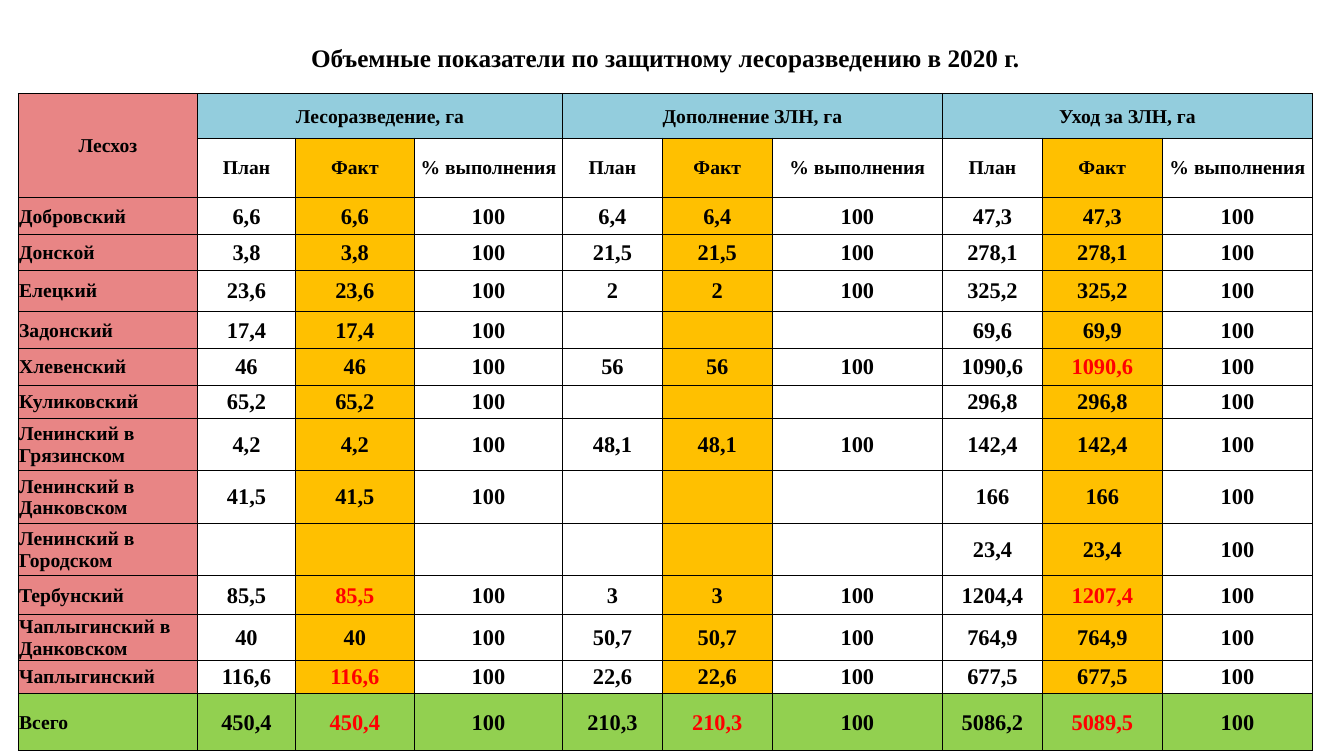
"""Builds the slide with the 2020 table of protective afforestation figures."""
from lxml import etree
from pptx import Presentation
from pptx.dml.color import RGBColor
from pptx.enum.text import MSO_ANCHOR, PP_ALIGN
from pptx.oxml.ns import qn
from pptx.util import Pt

MIDDLE = MSO_ANCHOR.MIDDLE
LEFT, CENTER = PP_ALIGN.LEFT, PP_ALIGN.CENTER

TITLE = "Объемные показатели по защитному лесоразведению в 2020 г."
CORNER = "Лесхоз"
GROUPS = ["Лесоразведение, га", "Дополнение ЗЛН, га", "Уход за ЗЛН, га"]
MEASURES = ["План", "Факт", "% выполнения"]
DONE = "100"
NO_DATA = ("", "")
FORESTRIES = [
    ("Добровский", ("6,6", "6,6"), ("6,4", "6,4"), ("47,3", "47,3")),
    ("Донской", ("3,8", "3,8"), ("21,5", "21,5"), ("278,1", "278,1")),
    ("Елецкий", ("23,6", "23,6"), ("2", "2"), ("325,2", "325,2")),
    ("Задонский", ("17,4", "17,4"), NO_DATA, ("69,6", "69,9")),
    ("Хлевенский", ("46", "46"), ("56", "56"), ("1090,6", "1090,6")),
    ("Куликовский", ("65,2", "65,2"), NO_DATA, ("296,8", "296,8")),
    ("Ленинский в Грязинском", ("4,2", "4,2"), ("48,1", "48,1"), ("142,4", "142,4")),
    ("Ленинский в Данковском", ("41,5", "41,5"), NO_DATA, ("166", "166")),
    ("Ленинский в Городском", NO_DATA, NO_DATA, ("23,4", "23,4")),
    ("Тербунский", ("85,5", "85,5"), ("3", "3"), ("1204,4", "1207,4")),
    ("Чаплыгинский в Данковском", ("40", "40"), ("50,7", "50,7"), ("764,9", "764,9")),
    ("Чаплыгинский", ("116,6", "116,6"), ("22,6", "22,6"), ("677,5", "677,5")),
    ("Всего", ("450,4", "450,4"), ("210,3", "210,3"), ("5086,2", "5089,5")),
]
RED_FACTS = {"1090,6", "85,5", "1207,4", "116,6", "450,4", "210,3", "5089,5"}

PX = 9144
SLIDE_WIDTH, SLIDE_HEIGHT = 1333, 750
TABLE_LEFT, TABLE_TOP = 18, 22
COLUMN_WIDTHS = [178, 97, 118, 147, 99, 109, 169, 99, 119, 149]
ROW_HEIGHTS = [71, 44, 59, 37, 35, 41, 37, 36, 33, 52, 52, 52, 39, 45, 33, 57]
FIRST_DATA_ROW = 3
TOTAL_ROW = len(ROW_HEIGHTS) - 1

FONT = "Times New Roman"
BLACK, RED, WHITE = "000000", "FF0000", "FFFFFF"
PINK, BLUE, AMBER, GREEN = "E88585", "93CDDD", "FFC000", "92D050"
MEASURE_FILLS = [WHITE, AMBER, WHITE]
ALL_SIDES = "LRTB"


def rgb(color):
    return RGBColor.from_string(color)


def write(cell, text, size=14, color=BLACK, align=CENTER):
    cell.vertical_anchor = MIDDLE
    cell.margin_left = cell.margin_right = cell.margin_top = PX
    cell.margin_bottom = 0
    para = cell.text_frame.paragraphs[0]
    para.alignment = align
    if text:
        span = para.add_run()
        span.text = text
        span.font.name, span.font.size, span.font.bold = FONT, Pt(size), True
        span.font.color.rgb = rgb(color)


def paint(cell, color):
    if color:
        cell.fill.solid()
        cell.fill.fore_color.rgb = rgb(color)
    else:
        cell.fill.background()


def outline(cell, sides):
    properties = cell._tc.get_or_add_tcPr()
    for position, side in enumerate(ALL_SIDES):
        line = etree.Element(qn(f"a:ln{side}"), w=str(Pt(0.5)))
        if side in sides:
            fill = etree.SubElement(line, qn("a:solidFill"))
            etree.SubElement(fill, qn("a:srgbClr"), val=BLACK)
        else:
            etree.SubElement(line, qn("a:noFill"))
        properties.insert(position, line)


def cell_fill(row, column):
    if row == 0:
        return None
    if row == TOTAL_ROW:
        return GREEN
    if column == 0:
        return PINK
    return BLUE if row == 1 else MEASURE_FILLS[(column - 1) % 3]


def add_table(page):
    frame = page.shapes.add_table(
        len(ROW_HEIGHTS), len(COLUMN_WIDTHS), TABLE_LEFT * PX, TABLE_TOP * PX,
        sum(COLUMN_WIDTHS) * PX, sum(ROW_HEIGHTS) * PX)
    table = frame.table
    table.first_row = table.horz_banding = False
    for column, width in enumerate(COLUMN_WIDTHS):
        table.columns[column].width = width * PX
    for row, height in enumerate(ROW_HEIGHTS):
        table.rows[row].height = height * PX
        for column in range(len(COLUMN_WIDTHS)):
            cell = table.cell(row, column)
            paint(cell, cell_fill(row, column))
            outline(cell, ALL_SIDES if row else "B")
    return table


def fill_headings(table):
    table.cell(0, 0).merge(table.cell(0, len(COLUMN_WIDTHS) - 1))
    write(table.cell(0, 0), TITLE, size=18)
    table.cell(1, 0).merge(table.cell(2, 0))
    write(table.cell(1, 0), CORNER)
    for group, heading in enumerate(GROUPS):
        first = 1 + 3 * group
        table.cell(1, first).merge(table.cell(1, first + 2))
        write(table.cell(1, first), heading)
        for offset, measure in enumerate(MEASURES):
            write(table.cell(2, first + offset), measure)


def fill_figures(table):
    for row, (name, *pairs) in enumerate(FORESTRIES, FIRST_DATA_ROW):
        write(table.cell(row, 0), name, align=LEFT)
        for group, (plan, fact) in enumerate(pairs):
            first = 1 + 3 * group
            write(table.cell(row, first), plan, size=16)
            write(table.cell(row, first + 1), fact, size=16,
                  color=RED if fact in RED_FACTS else BLACK)
            write(table.cell(row, first + 2), DONE if plan else "", size=16)


def main():
    deck = Presentation()
    deck.slide_width, deck.slide_height = SLIDE_WIDTH * PX, SLIDE_HEIGHT * PX
    page = deck.slides.add_slide(deck.slide_layouts[6])
    table = add_table(page)
    fill_headings(table)
    fill_figures(table)
    deck.save("out.pptx")


if __name__ == "__main__":
    main()
